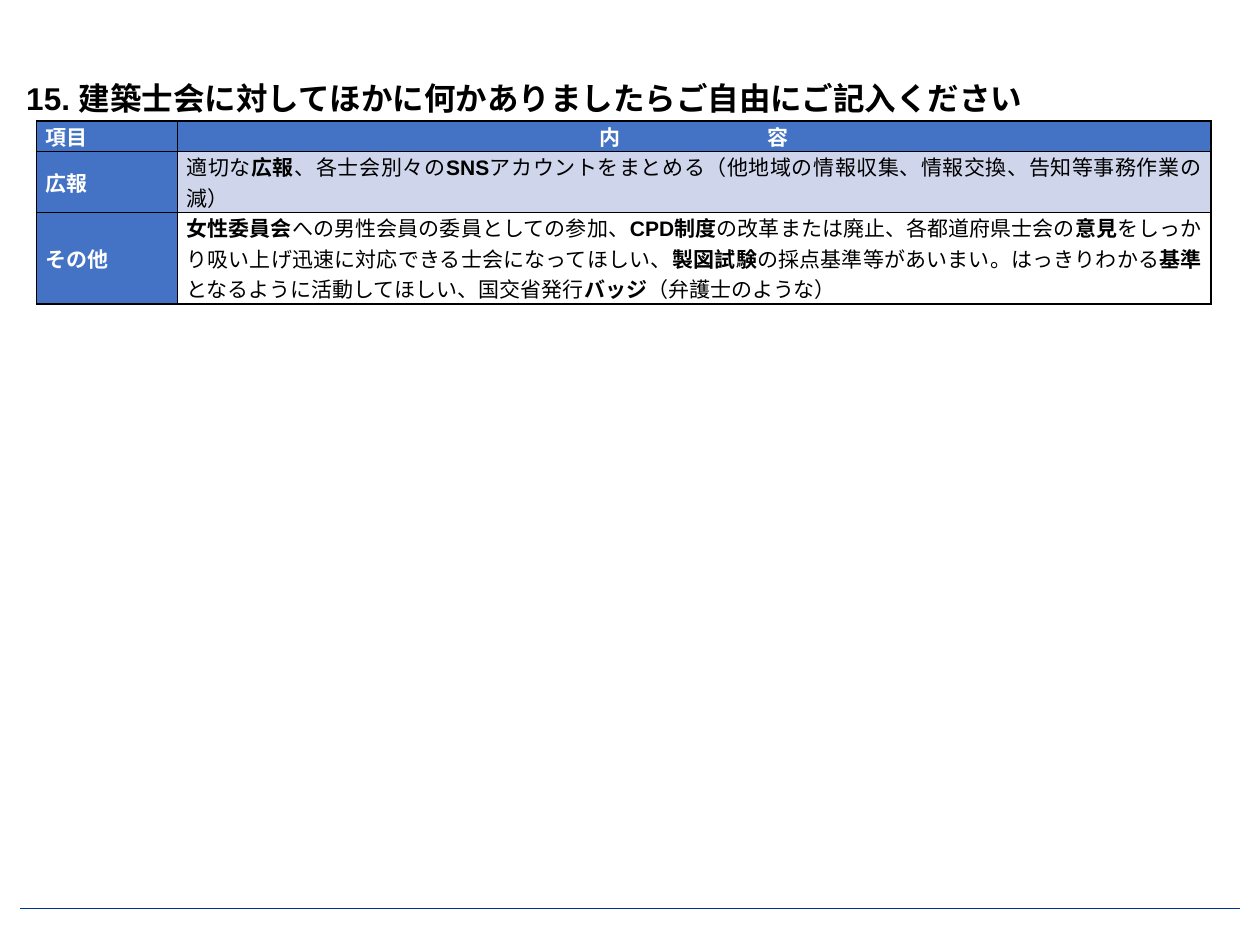
from dataclasses import dataclass

from lxml import etree
from pptx import Presentation
from pptx.dml.color import RGBColor
from pptx.enum.shapes import MSO_CONNECTOR
from pptx.enum.text import MSO_ANCHOR, MSO_AUTO_SIZE, PP_ALIGN
from pptx.oxml.ns import qn
from pptx.util import Inches, Pt

STRAIGHT = MSO_CONNECTOR.STRAIGHT
MIDDLE = MSO_ANCHOR.MIDDLE
FIT_SHAPE = MSO_AUTO_SIZE.SHAPE_TO_FIT_TEXT
JUSTIFY, CENTER, LEFT = PP_ALIGN.JUSTIFY, PP_ALIGN.CENTER, PP_ALIGN.LEFT

BLUE, PALE, WHITE, BLACK, NAVY = "4472C4", "CFD5EA", "FFFFFF", "000000", "003399"
BODY_SIZE = 12
COL_WIDTHS = (1.12, 8.2)
LINE_HEIGHT = 0.242


@dataclass
class Run:
    text: str
    bold: bool = False
    tracking: int = 0


@dataclass
class Cell:
    runs: list[Run]
    fill: str | None = BLUE
    color: str = WHITE
    font: str = "Arial"
    align: PP_ALIGN = JUSTIFY


@dataclass
class Row:
    lines: int
    cells: tuple[Cell, Cell]


def rgb(value: str) -> RGBColor:
    return RGBColor.from_string(value)


def add_runs(p, runs: list[Run], font: str, size: float, color: str) -> None:
    for run in runs:
        r = p.add_run()
        r.text = run.text
        r.font.name = font
        r.font.size = Pt(size)
        r.font.bold = run.bold
        r.font.color.rgb = rgb(color)
        if run.tracking:
            r.font._element.set("spc", str(run.tracking * 100))


def add_borders(cell, color: str, width: float) -> None:
    tc_pr = cell._tc.get_or_add_tcPr()
    for i, side in enumerate(("lnL", "lnR", "lnT", "lnB")):
        ln = etree.Element(qn(f"a:{side}"), w=str(Pt(width)))
        fill = etree.SubElement(ln, qn("a:solidFill"))
        etree.SubElement(fill, qn("a:srgbClr"), val=color)
        tc_pr.insert(i, ln)


def draw_cell(cell, data: Cell) -> None:
    cell.margin_left = cell.margin_right = Inches(0.07)
    cell.margin_top = cell.margin_bottom = 0
    cell.vertical_anchor = MIDDLE
    if data.fill:
        cell.fill.solid()
        cell.fill.fore_color.rgb = rgb(data.fill)
    else:
        cell.fill.background()
    add_borders(cell, BLACK, 1)
    p = cell.text_frame.paragraphs[0]
    p.alignment = data.align
    add_runs(p, data.runs, data.font, BODY_SIZE, data.color)


def draw_table(s, left: float, top: float, rows: list[Row]) -> None:
    height = LINE_HEIGHT * sum(row.lines for row in rows)
    table = s.shapes.add_table(
        len(rows), len(COL_WIDTHS), Inches(left), Inches(top),
        Inches(sum(COL_WIDTHS)), Inches(height)).table
    for col, width in zip(table.columns, COL_WIDTHS):
        col.width = Inches(width)
    for i, row in enumerate(rows):
        table.rows[i].height = Inches(LINE_HEIGHT * row.lines)
        for j, data in enumerate(row.cells):
            draw_cell(table.cell(i, j), data)


def draw_title(s, text: str) -> None:
    sp = s.shapes.add_textbox(Inches(0.11), Inches(0.58), Inches(8.21), Inches(0.4))
    tf = sp.text_frame
    tf.word_wrap = False
    tf.auto_size = FIT_SHAPE
    p = tf.paragraphs[0]
    p.alignment = LEFT
    add_runs(p, [Run(text, True)], "Arial", 18, BLACK)


def draw_footer_line(s, slide_width: float, margin: float, top: float) -> None:
    line = s.shapes.add_connector(
        STRAIGHT, Inches(margin), Inches(top),
        Inches(slide_width - margin), Inches(top))
    line.line.color.rgb = rgb(NAVY)
    line.line.width = Pt(0.5)
    etree.SubElement(line._element.spPr, qn("a:effectLst"))


ROWS = [
    Row(1, (
        Cell([Run("項目", True)]),
        Cell([Run("内", True, 7 * BODY_SIZE), Run("容", True)], align=CENTER),
    )),
    Row(2, (
        Cell([Run("広報", True)], font="Calibri"),
        Cell([
            Run("適切な"),
            Run("広報", True),
            Run("、各士会別々の"),
            Run("SNS", True),
            Run("アカウントをまとめる（他地域の情報収集、情報交換、告知等事務作業の減）"),
        ], PALE, BLACK),
    )),
    Row(3, (
        Cell([Run("その他", True)], font="Calibri"),
        Cell([
            Run("女性委員会", True),
            Run("への男性会員の委員としての参加、"),
            Run("CPD制度", True),
            Run("の改革または廃止、各都道府県士会の"),
            Run("意見", True),
            Run("をしっかり吸い上げ迅速に対応できる士会になってほしい、"),
            Run("製図試験", True),
            Run("の採点基準等があいまい。はっきりわかる"),
            Run("基準", True),
            Run("となるように活動してほしい、国交省発行"),
            Run("バッジ", True),
            Run("（弁護士のような）"),
        ], None, BLACK),
    )),
]


def main() -> None:
    prs = Presentation()
    prs.slide_width, prs.slide_height = Inches(10), Inches(7.5)
    s = prs.slides.add_slide(prs.slide_layouts[6])
    draw_footer_line(s, 10, 0.16, 7.21)
    draw_table(s, 0.29, 0.96, ROWS)
    draw_title(s, "15. 建築士会に対してほかに何かありましたらご自由にご記入ください")
    prs.save("out.pptx")


if __name__ == "__main__":
    main()
